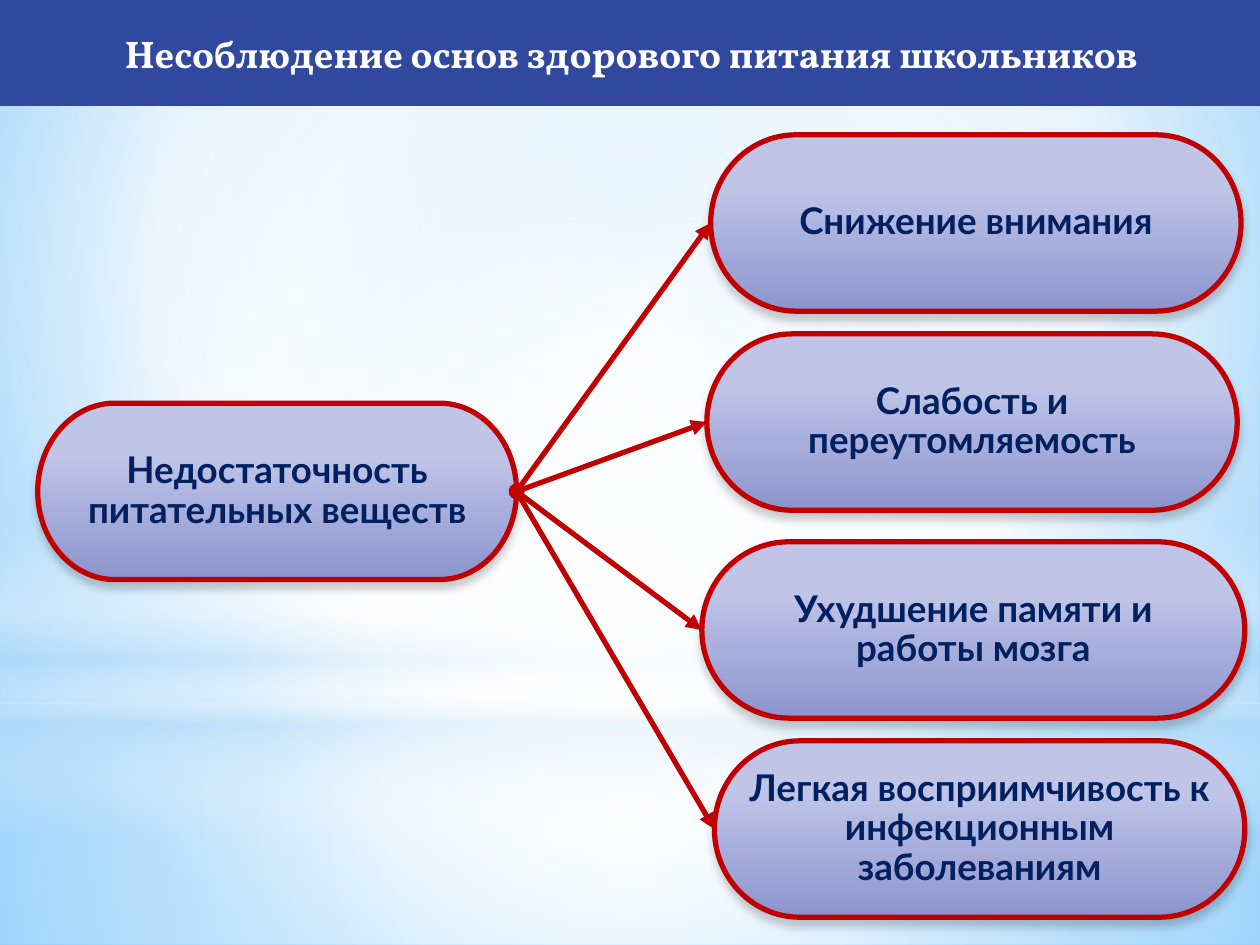
from lxml import etree
from pptx import Presentation
from pptx.dml.color import RGBColor
from pptx.enum.shapes import MSO_CONNECTOR as Connector, MSO_SHAPE as Shape
from pptx.enum.text import MSO_ANCHOR as Anchor, PP_ALIGN as Align
from pptx.oxml.ns import qn
from pptx.util import Inches, Pt

COLORS = {
    "white": "FFFFFF", "sky": "B4DCFA", "sky_mid": "9ED5FF", "sky_deep": "5BB9FF",
    "banner": "31489F", "pill_top": "C0C5E8", "pill_bottom": "8C94CE",
    "red": "C00000", "navy": "002060", "black": "000000",
}
CENTER = (50, 50, 50, 50)
PILL_HEIGHT = 1.4

# Soft layers over the background: shape, box, stops (position, colour, opacity), focus
LAYERS = [
    (Shape.RECTANGLE, (0, 5.58, 10, 1.92),
     [(0, "white", 91), (37, "white", 76), (100, "sky", 79)], CENTER),
    (Shape.RECTANGLE, (0, 0, 10, 5.58),
     [(0, "white", 89), (48, "white", 62), (100, "sky", 79)], CENTER),
    (Shape.RECTANGLE, (0, 4.12, 10, 2.5),
     [(0, "white", 0), (29, "white", 30), (45, "sky", 40),
      (55, "white", 26), (65, "sky", 60), (100, "white", 0)], None),
    (Shape.OVAL, (0, 1.75, 10, 5.58),
     [(0, "white", 100), (56, "white", 0)], CENTER),
]

# Consequences: text, left, top, width, arrow start
CONSEQUENCES = [
    ("Снижение внимания", 5.64, 1.07, 4.21, "oval"),
    ("Слабость и переутомляемость", 5.61, 2.65, 4.21, "oval"),
    ("Ухудшение памяти и работы мозга", 5.57, 4.3, 4.31, "diamond"),
    ("Легкая восприимчивость к инфекционным заболеваниям", 5.67, 5.88, 4.21, "diamond"),
]


def rgb(name):
    return RGBColor.from_string(COLORS[name])


def add_color(parent, name, opacity=100):
    color = etree.SubElement(parent, qn("a:srgbClr"), val=COLORS[name])
    if opacity < 100:
        etree.SubElement(color, qn("a:alpha"), val=str(opacity * 1000))


def make_gradient(stops, focus=None):
    """Circular gradient around focus, or a vertical one without it."""
    gradient = etree.Element(qn("a:gradFill"), rotWithShape="1")
    stop_list = etree.SubElement(gradient, qn("a:gsLst"))
    for position, name, opacity in stops:
        stop = etree.SubElement(stop_list, qn("a:gs"), pos=str(position * 1000))
        add_color(stop, name, opacity)
    if focus:
        circle = etree.SubElement(gradient, qn("a:path"), path="circle")
        sides = {side: str(value * 1000) for side, value in zip("ltrb", focus)}
        etree.SubElement(circle, qn("a:fillToRect"), **sides)
    else:
        etree.SubElement(gradient, qn("a:lin"), ang="5400000", scaled="0")
    return gradient


def set_background(slide, stops, focus):
    slide.background.fill.solid()
    properties = slide._element.find(".//" + qn("p:bgPr"))
    properties.replace(properties[0], make_gradient(stops, focus))


def add_block(slide, kind, box, gradient=None):
    shape = slide.shapes.add_shape(kind, *map(Inches, box))
    shape.shadow.inherit = False
    shape.line.fill.background()
    if gradient is not None:
        shape._element.spPr.find(qn("a:prstGeom")).addnext(gradient)
    return shape


def set_text(shape, text, *, font, size, color, margin=0.1, spacing=1.0):
    frame = shape.text_frame
    frame.word_wrap = True
    frame.vertical_anchor = Anchor.MIDDLE
    frame.margin_left = frame.margin_right = Inches(margin)
    frame.margin_top = frame.margin_bottom = Inches(min(margin, 0.05))
    paragraph = frame.paragraphs[0]
    paragraph.alignment = Align.CENTER
    paragraph.line_spacing = spacing
    run = paragraph.add_run()
    run.text = text
    run.font.name = font
    run.font.size = Pt(size)
    run.font.bold = True
    run.font.color.rgb = rgb(color)


def add_pill(slide, text, left, top, width):
    gradient = make_gradient([(28, "pill_top", 100), (100, "pill_bottom", 100)])
    pill = add_block(slide, Shape.FLOWCHART_TERMINATOR,
                     (left, top, width, PILL_HEIGHT), gradient)
    pill.line.color.rgb = rgb("red")
    pill.line.width = Pt(3)
    effects = pill._element.spPr.find(qn("a:effectLst"))
    shadow = etree.SubElement(effects, qn("a:outerShdw"), blurRad=str(Pt(5)),
                              dist=str(Pt(4)), dir="5400000", rotWithShape="0")
    add_color(shadow, "black", 20)
    set_text(pill, text, font="Lato", size=21, color="navy", margin=0.01, spacing=0.9)
    return pill


def add_arrow(slide, source, target, start):
    arrow = slide.shapes.add_connector(Connector.STRAIGHT, 0, 0, 0, 0)
    arrow.begin_connect(source, 3)
    arrow.end_connect(target, 1)
    arrow.line.color.rgb = rgb("red")
    arrow.line.width = Pt(3)
    line = arrow.line._get_or_add_ln()
    etree.SubElement(line, qn("a:headEnd"), type=start)
    etree.SubElement(line, qn("a:tailEnd"), type="triangle")
    etree.SubElement(arrow._element.spPr, qn("a:effectLst"))


def main():
    presentation = Presentation()
    presentation.slide_width = Inches(10)
    presentation.slide_height = Inches(7.5)
    slide = presentation.slides.add_slide(presentation.slide_layouts[6])

    # Sky background
    set_background(slide, [(0, "sky_mid", 100), (60, "white", 100),
                           (100, "sky_deep", 100)], (20, 10, 20, 60))
    for kind, box, stops, focus in LAYERS:
        add_block(slide, kind, box, make_gradient(stops, focus))

    # Cause and its consequences
    cause = add_pill(slide, "Недостаточность питательных веществ", 0.3, 3.2, 3.8)
    for text, left, top, width, start in CONSEQUENCES:
        consequence = add_pill(slide, text, left, top, width)
        add_arrow(slide, cause, consequence, start)

    # Title banner
    banner = add_block(slide, Shape.RECTANGLE, (0, 0, 10.02, 0.84))
    banner.fill.solid()
    banner.fill.fore_color.rgb = rgb("banner")
    set_text(banner, "Несоблюдение основ здорового питания школьников",
             font="Vollkorn", size=22, color="white")

    presentation.save("out.pptx")


if __name__ == "__main__":
    main()
